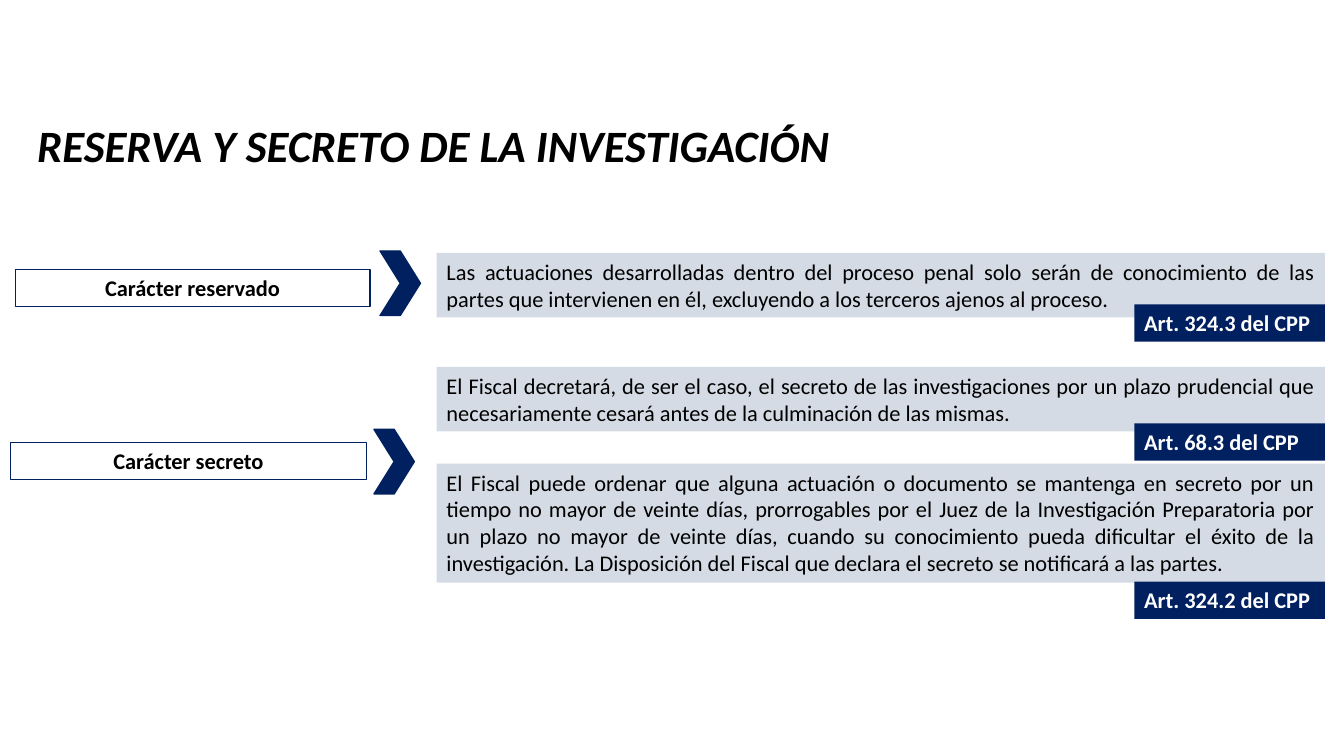
"""Build the slide on the reserve and secrecy of the investigation."""
from dataclasses import dataclass

from pptx import Presentation
from pptx.dml.color import RGBColor
from pptx.enum.shapes import MSO_SHAPE as Preset
from pptx.enum.text import MSO_ANCHOR as Anchor, MSO_AUTO_SIZE as AutoSize, PP_ALIGN as Align
from pptx.shapes.base import BaseShape
from pptx.slide import Slide
from pptx.util import Emu, Pt

PX = 9144
COLORS = {"navy": "002060", "mist": "D5DBE5", "white": "FFFFFF", "black": "000000"}


@dataclass(frozen=True)
class Style:
    fill: str
    text_color: str
    align: Align
    bold: bool = False
    line: str = ""
    line_width: float = 0.75


@dataclass(frozen=True)
class Box:
    style: Style
    left: int
    top: int
    width: int
    height: int
    text: str = ""
    preset: Preset = Preset.RECTANGLE


RULE = Style("mist", "black", Align.JUSTIFY)
LABEL = Style("white", "black", Align.CENTER, bold=True, line="navy")
ARTICLE = Style("navy", "white", Align.LEFT, bold=True)
ARROW = Style("navy", "white", Align.CENTER, line="navy", line_width=1)

RULE_LEFT, RULE_WIDTH = 433, 881
ARTICLE_WIDTH, LINE_HEIGHT = 189, 37
ARTICLE_LEFT = RULE_LEFT + RULE_WIDTH - ARTICLE_WIDTH


def rule(top: int, height: int, text: str) -> Box:
    return Box(RULE, RULE_LEFT, top, RULE_WIDTH, height, text)


def article(top: int, number: str) -> Box:
    return Box(ARTICLE, ARTICLE_LEFT, top, ARTICLE_WIDTH, LINE_HEIGHT, f"Art. {number} del CPP")


def label(left: int, top: int, width: int, text: str) -> Box:
    return Box(LABEL, left, top, width, LINE_HEIGHT, text)


def arrow(left: int, top: int) -> Box:
    return Box(ARROW, left, top, 40, 64, preset=Preset.CHEVRON)


BOXES = [
    rule(251, 64, "Las actuaciones desarrolladas dentro del proceso penal solo serán de conocimiento "
         "de las partes que intervienen en él, excluyendo a los terceros ajenos al proceso."),
    label(15, 267, 352, "Carácter reservado"),
    arrow(377, 249),
    rule(364, 64, "El Fiscal decretará, de ser el caso, el secreto de las investigaciones por un plazo "
         "prudencial que necesariamente cesará antes de la culminación de las mismas."),
    label(10, 439, 354, "Carácter secreto"),
    arrow(371, 426),
    article(302, "324.3"),
    article(420, "68.3"),
    rule(460, 118, "El Fiscal puede ordenar que alguna actuación o documento se mantenga en secreto por "
         "un tiempo no mayor de veinte días, prorrogables por el Juez de la Investigación "
         "Preparatoria por un plazo no mayor de veinte días, cuando su conocimiento pueda "
         "dificultar el éxito de la investigación. La Disposición del Fiscal que declara el "
         "secreto se notificará a las partes."),
    article(577, "324.2"),
]


def rgb(name: str) -> RGBColor:
    return RGBColor.from_string(COLORS[name])


def write(shape: BaseShape, text: str, align: Align, color: str, font_format: dict) -> None:
    frame = shape.text_frame
    frame_format = {"word_wrap": True, "auto_size": AutoSize.SHAPE_TO_FIT_TEXT,
                    "vertical_anchor": Anchor.TOP}
    for name, value in frame_format.items():
        setattr(frame, name, value)
    paragraph = frame.paragraphs[0]
    paragraph.alignment = align
    run = paragraph.add_run()
    run.text = text
    for name, value in {"name": "Calibri", **font_format}.items():
        setattr(run.font, name, value)
    run.font.color.rgb = rgb(color)


def draw_box(slide: Slide, box: Box) -> None:
    style = box.style
    place = [Emu(length * PX) for length in (box.left, box.top, box.width, box.height)]
    shape = slide.shapes.add_shape(box.preset, *place)
    shape.shadow.inherit = False
    shape.fill.solid()
    shape.fill.fore_color.rgb = rgb(style.fill)
    if style.line:
        shape.line.color.rgb = rgb(style.line)
        shape.line.width = Pt(style.line_width)
    else:
        shape.line.fill.background()
    if box.text:
        write(shape, box.text, style.align, style.text_color, {"size": Pt(16), "bold": style.bold})


def draw_title(slide: Slide) -> None:
    title = slide.shapes.add_textbox(*[Emu(length * PX) for length in (27, 112, 881, 64)])
    write(title, "RESERVA Y SECRETO DE LA INVESTIGACIÓN", Align.JUSTIFY, "black",
          {"size": Pt(32), "bold": True, "italic": True})


def main() -> None:
    presentation = Presentation()
    presentation.slide_width = Emu(1333 * PX)
    presentation.slide_height = Emu(750 * PX)
    slide = presentation.slides.add_slide(presentation.slide_layouts[6])
    draw_title(slide)
    for box in BOXES:
        draw_box(slide, box)
    presentation.save("out.pptx")


if __name__ == "__main__":
    main()
